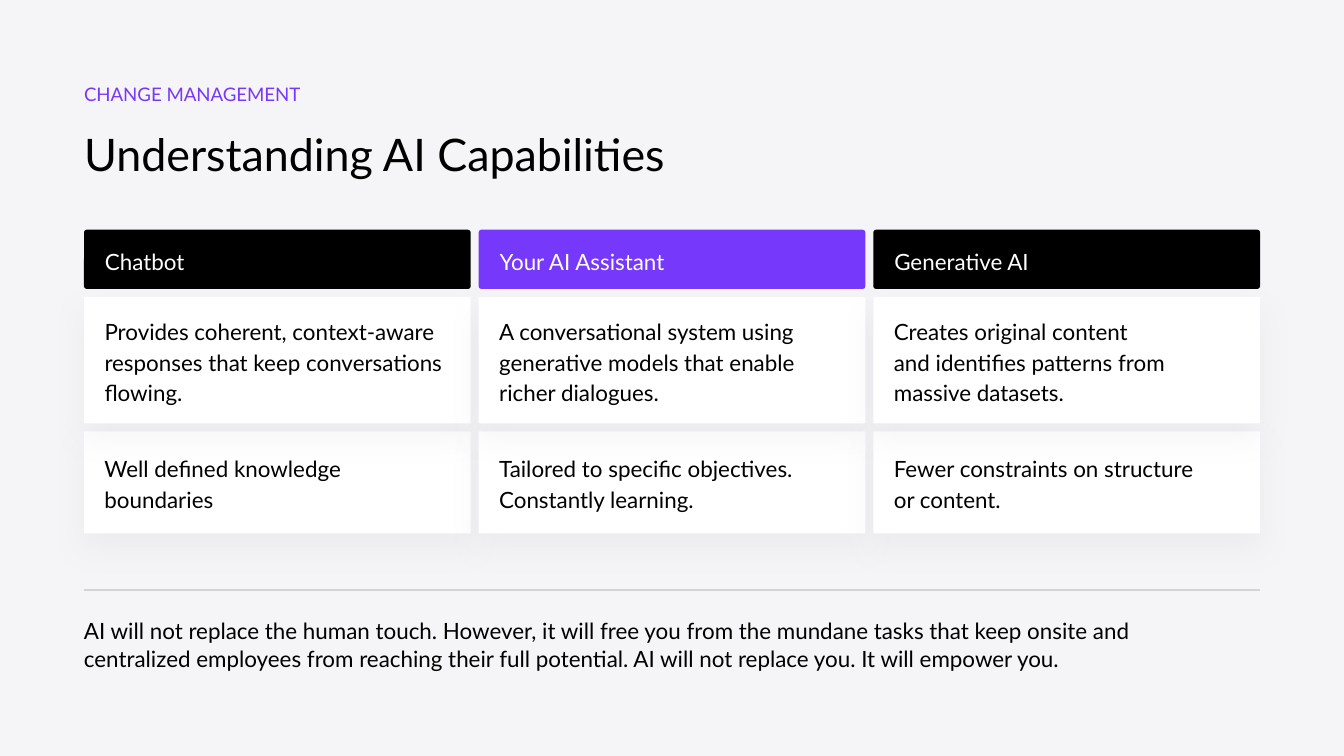
from dataclasses import dataclass

from lxml import etree
from pptx import Presentation
from pptx.dml.color import RGBColor
from pptx.enum.shapes import MSO_CONNECTOR, MSO_SHAPE
from pptx.enum.text import MSO_ANCHOR, MSO_AUTO_SIZE, PP_ALIGN
from pptx.oxml.ns import qn
from pptx.util import Inches, Pt

ROUND_RECT = MSO_SHAPE.ROUNDED_RECTANGLE
STRAIGHT = MSO_CONNECTOR.STRAIGHT
MIDDLE, TOP = MSO_ANCHOR.MIDDLE, MSO_ANCHOR.TOP
LEFT = PP_ALIGN.LEFT
GROW = MSO_AUTO_SIZE.SHAPE_TO_FIT_TEXT

FONT = "Lato"
BLACK, WHITE, PURPLE = "000000", "FFFFFF", "7638FA"
PAGE, RULE, SHADOW = "F5F5F7", "D3D3D5", "999999"

# Grid: three equal columns between the margins, rows with the same gap
W, H = 10, 5.625
MARGIN = W / 16
GAP = 0.06
CONTENT_W = W - 2 * MARGIN
COL_W = (CONTENT_W - 2 * GAP) / 3
GRID_TOP = 1.71
ROW_H = (0.44, 0.94, 0.76)
RADIUS = 0.02
PAD = 0.15


@dataclass
class Column:
    title: str
    color: str
    cells: tuple[str, str]


@dataclass
class Label:
    text: str
    top: float
    width: float
    height: float
    size: float
    color: str = BLACK
    spacing: float = 1.0
    after: float = 0


COLUMNS = [
    Column("Chatbot", BLACK, (
        "Provides coherent, context-aware responses that keep conversations flowing.",
        "Well defined knowledge boundaries")),
    Column("Your AI Assistant", PURPLE, (
        "A conversational system using generative models that enable richer dialogues.",
        "Tailored to specific objectives. Constantly learning.")),
    Column("Generative AI", BLACK, (
        "Creates original content\nand identifies patterns from massive datasets.",
        "Fewer constraints on structure\nor content.")),
]

LABELS = [
    Label("CHANGE MANAGEMENT", 0.62, 4.25, 0.17, 10, PURPLE),
    Label("Understanding AI Capabilities", 0.88, 6.41, 0.4, 24, spacing=1.15, after=12),
    Label("AI will not replace the human touch. However, it will free you from the "
          "mundane tasks that keep onsite and centralized employees from reaching their "
          "full potential. AI will not replace you. It will empower you.",
          4.58, 8.17, 0.41, 12, spacing=1.05, after=12),
]


def rgb(color: str) -> RGBColor:
    return RGBColor.from_string(color)


def add_effects(s, shadow: bool) -> None:
    """Give the shape an effect list, empty or with a soft drop shadow."""
    effects = etree.SubElement(s._element.spPr, qn("a:effectLst"))
    if shadow:
        outer = etree.SubElement(effects, qn("a:outerShdw"), blurRad=str(Pt(16.9)),
                                 dist=str(Pt(7.5)), dir="5400000", algn="bl",
                                 rotWithShape="0")
        clr = etree.SubElement(outer, qn("a:srgbClr"), val=SHADOW)
        etree.SubElement(clr, qn("a:alpha"), val="10000")


def write(tf, text: str, size: float, color: str, spacing: float,
          after: float = 0, pad: tuple[float, float] = (0, 0), anchor=TOP) -> None:
    tf.word_wrap = True
    tf.vertical_anchor = anchor
    tf.margin_left = tf.margin_right = Inches(pad[0])
    tf.margin_top = tf.margin_bottom = Inches(pad[1])
    p = tf.paragraphs[0]
    p.alignment = LEFT
    p.line_spacing = spacing
    p.space_after = Pt(after)
    for i, line in enumerate(text.split("\n")):
        if i:
            p.add_line_break()
        r = p.add_run()
        r.text = line
        r.font.name, r.font.size = FONT, Pt(size)
        r.font.color.rgb = rgb(color)


def add_cell(s, col: int, row: int, text: str, fill: str, color: str) -> None:
    header = row == 0
    x = MARGIN + col * (COL_W + GAP)
    y = GRID_TOP + sum(ROW_H[:row]) + row * GAP
    sp = s.shapes.add_shape(ROUND_RECT, Inches(x), Inches(y),
                            Inches(COL_W), Inches(ROW_H[row]))
    sp.adjustments[0] = RADIUS / ROW_H[row] if header else 0.01
    sp.fill.solid()
    sp.fill.fore_color.rgb = rgb(fill)
    sp.line.fill.background()
    add_effects(sp, shadow=not header)
    write(sp.text_frame, text, 12, color, 1.15,
          pad=(PAD, 0.1 if header else PAD), anchor=MIDDLE)


def add_label(s, label: Label) -> None:
    sp = s.shapes.add_textbox(Inches(MARGIN), Inches(label.top),
                              Inches(label.width), Inches(label.height))
    write(sp.text_frame, label.text, label.size, label.color, label.spacing, label.after)
    sp.text_frame.auto_size = GROW


def add_rule(s, y: float) -> None:
    sp = s.shapes.add_connector(STRAIGHT, Inches(MARGIN), Inches(y),
                                Inches(W - MARGIN), Inches(y))
    sp.line.color.rgb = rgb(RULE)
    sp.line.width = Pt(0.75)
    add_effects(sp, shadow=False)


def main() -> None:
    prs = Presentation()
    prs.slide_width, prs.slide_height = Inches(W), Inches(H)
    s = prs.slides.add_slide(prs.slide_layouts[6])
    s.background.fill.solid()
    s.background.fill.fore_color.rgb = rgb(PAGE)

    # Heading and closing text
    for label in LABELS:
        add_label(s, label)
    add_rule(s, 4.39)

    # Comparison grid: the lower cell lies behind the upper cell's shadow
    for i, column in enumerate(COLUMNS):
        add_cell(s, i, 2, column.cells[1], WHITE, BLACK)
        add_cell(s, i, 0, column.title, column.color, WHITE)
        add_cell(s, i, 1, column.cells[0], WHITE, BLACK)

    prs.save("out.pptx")


if __name__ == "__main__":
    main()
